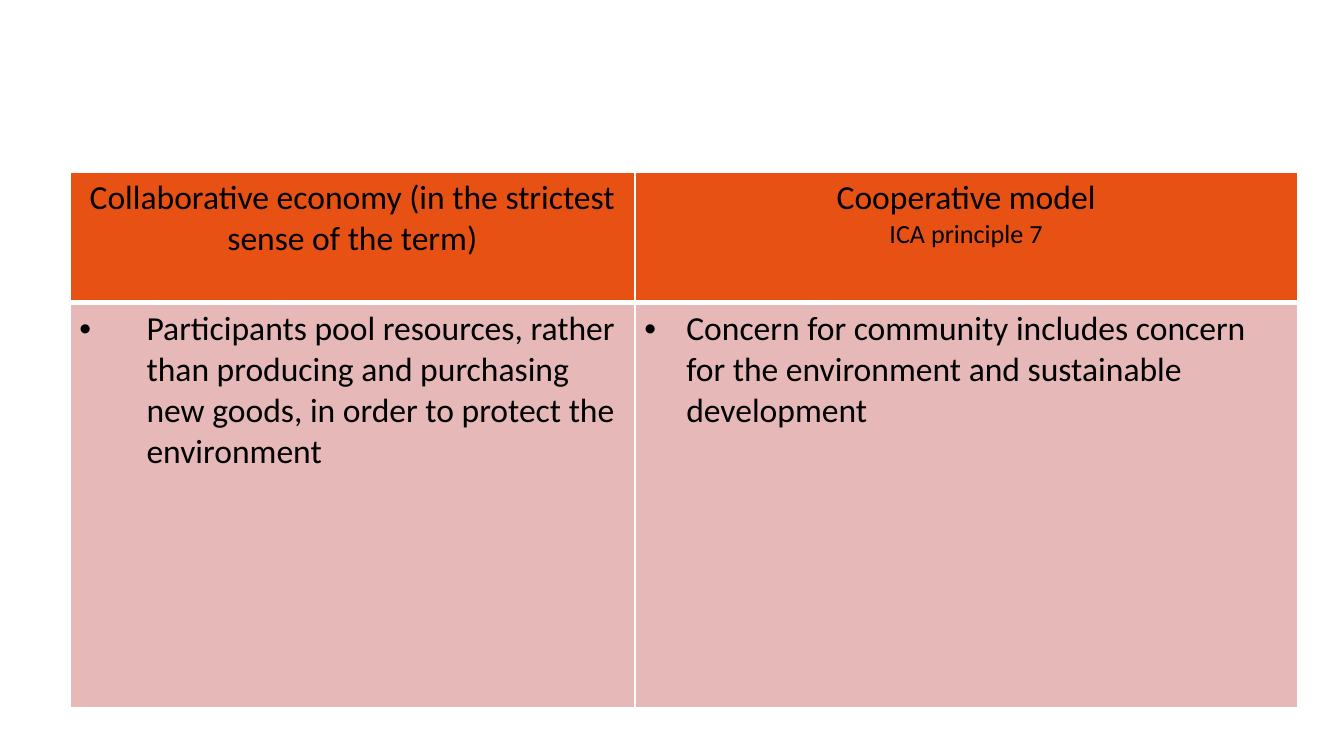
from lxml import etree
from pptx import Presentation
from pptx import util as u
from pptx.dml.color import RGBColor
from pptx.enum import text
from pptx.oxml import ns

COLOURS = {"header": "E75113", "body": "E6B9B8", "text": "000000", "border": "FFFFFF"}

HEADERS = [
    [("Collaborative economy (in the strictest sense of the term)", 18)],
    [("Cooperative model", 18), ("ICA principle 7", 14)],
]
POINTS = [
    ("Participants pool resources, rather than producing and purchasing new goods, "
     "in order to protect the environment", u.Cm(1.27)),
    ("Concern for community includes concern for the environment and sustainable "
     "development", u.Cm(0.79)),
]


class SlideBuilder:
    font = "Calibri"

    def __init__(self, page):
        self.page = page

    def table(self, left, top, widths, heights):
        frame = self.page.shapes.add_table(
            len(heights), len(widths), left, top, sum(widths), sum(heights))
        table = frame.table
        for column, width in zip(table.columns, widths):
            column.width = width
        for row, height in zip(table.rows, heights):
            row.height = height
        return table

    def cell(self, cell, fill, bottom=1):
        """Set the margins, borders and fill; bottom is a line width in points."""
        cell.margin_left = cell.margin_right = u.Cm(0.18)
        cell.margin_top = cell.margin_bottom = u.Cm(0.1)
        properties = cell._tc.get_or_add_tcPr()
        for side, points in (("L", 1), ("R", 1), ("T", 1), ("B", bottom)):
            line = etree.SubElement(properties, ns.qn(f"a:ln{side}"), w=str(u.Pt(points)))
            solid = etree.SubElement(line, ns.qn("a:solidFill"))
            etree.SubElement(solid, ns.qn("a:srgbClr"), val=COLOURS["border"])
        cell.fill.solid()
        cell.fill.fore_color.rgb = RGBColor.from_string(COLOURS[fill])

    def style(self, para, size):
        for span in para.runs:
            span.font.name = self.font
            span.font.size = u.Pt(size)
            span.font.bold = False
            span.font.color.rgb = RGBColor.from_string(COLOURS["text"])

    def header(self, cell, lines):
        self.cell(cell, "header", bottom=3)
        cell.text_frame.text = "\n".join(line for line, _ in lines)
        for para, (_, size) in zip(cell.text_frame.paragraphs, lines):
            para.alignment = text.PP_ALIGN.CENTER
            self.style(para, size)

    def bullet(self, cell, wording, indent):
        self.cell(cell, "body")
        cell.text_frame.text = wording
        para = cell.text_frame.paragraphs[0]
        properties = para._p.get_or_add_pPr()
        properties.set("marL", str(indent))
        properties.set("indent", str(-indent))
        etree.SubElement(properties, ns.qn("a:buFont"), typeface="Arial")
        etree.SubElement(properties, ns.qn("a:buChar"), char="•")
        self.style(para, 18)


def main():
    deck = Presentation()
    deck.slide_width, deck.slide_height = u.Cm(25.4), u.Cm(14.28)
    builder = SlideBuilder(deck.slides.add_slide(deck.slide_layouts[6]))
    table = builder.table(u.Cm(1.32), u.Cm(3.25),
                          [u.Cm(10.68), u.Cm(12.52)], [u.Cm(2.47), u.Cm(7.64)])
    for column, lines in enumerate(HEADERS):
        builder.header(table.cell(0, column), lines)
    for column, (wording, indent) in enumerate(POINTS):
        builder.bullet(table.cell(1, column), wording, indent)
    deck.save("out.pptx")


if __name__ == "__main__":
    main()
